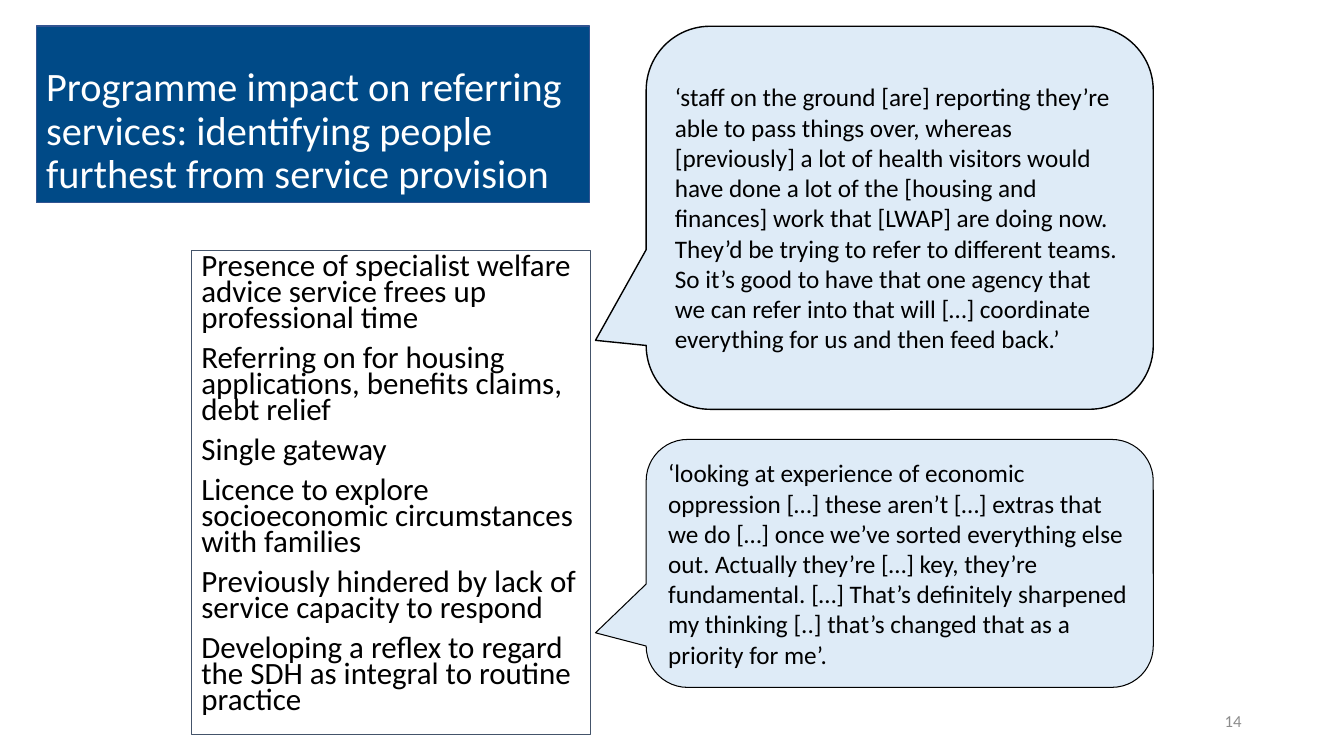
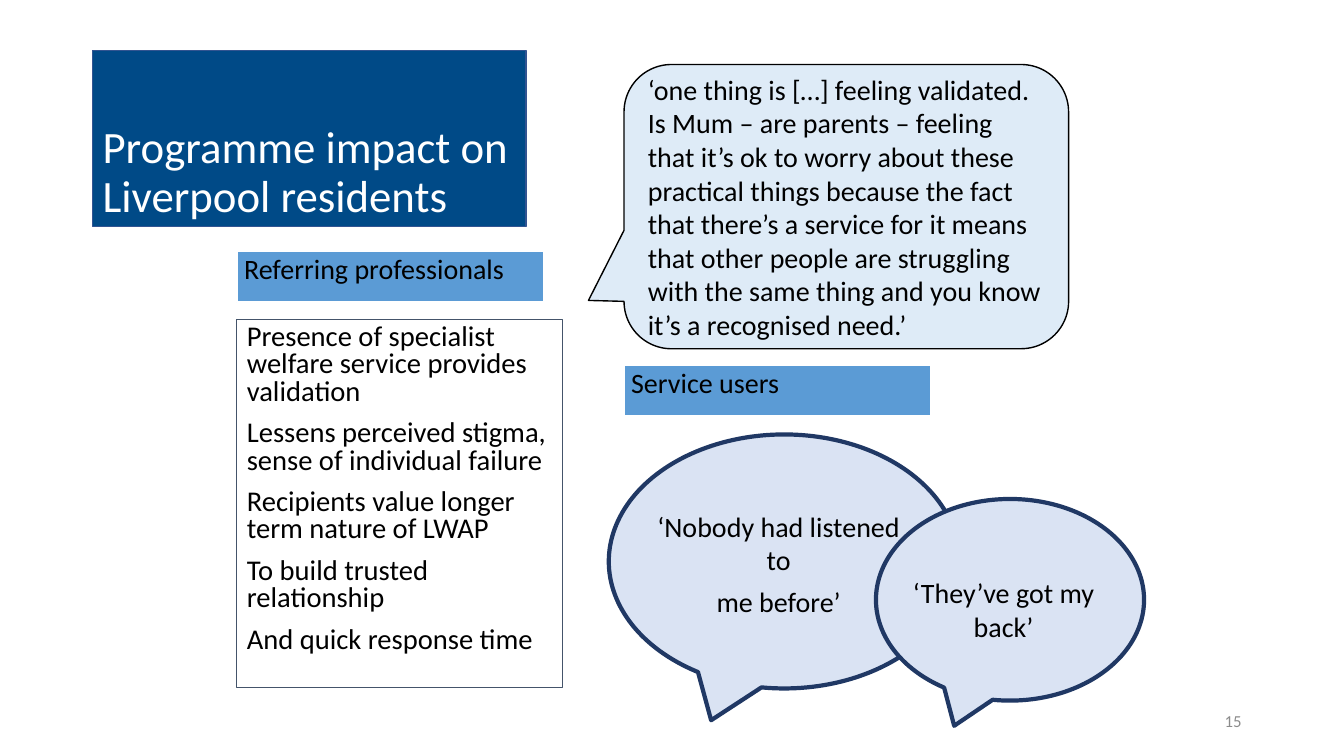
"""Build two slides on programme impact, with key points and quoted speech."""

from dataclasses import dataclass

from pptx import Presentation
from pptx.dml.color import RGBColor
from pptx.enum.shapes import MSO_SHAPE
from pptx.enum.text import MSO_ANCHOR, PP_ALIGN
from pptx.presentation import Presentation as Deck
from pptx.shapes.autoshape import Shape
from pptx.slide import Slide
from pptx.util import Inches, Pt

RECTANGLE = MSO_SHAPE.RECTANGLE
ROUND_CALLOUT = MSO_SHAPE.ROUNDED_RECTANGULAR_CALLOUT
OVAL_CALLOUT = MSO_SHAPE.OVAL_CALLOUT
TOP, MIDDLE, BOTTOM = MSO_ANCHOR.TOP, MSO_ANCHOR.MIDDLE, MSO_ANCHOR.BOTTOM
LEFT, CENTER, RIGHT = PP_ALIGN.LEFT, PP_ALIGN.CENTER, PP_ALIGN.RIGHT

SLIDE_WIDTH = Inches(13.333)
SLIDE_HEIGHT = Inches(7.5)
BLANK_LAYOUT = 6


@dataclass(frozen=True)
class Theme:
    """Colours and type sizes that the slides share."""

    font: str = "Calibri"
    ink: str = "000000"
    paper: str = "FFFFFF"
    navy: str = "004A87"
    navy_edge: str = "325491"
    slate: str = "44546A"
    pale_blue: str = "DEEBF7"
    mid_blue: str = "5B9BD5"
    lilac: str = "DAE3F3"
    deep_blue: str = "203864"
    grey: str = "8C8C8C"
    long_title: float = 28.8
    title: float = 32
    long_points: float = 22.1
    points: float = 20.4
    long_quote: float = 18
    text: float = 20
    number: float = 12


THEME = Theme()


@dataclass(frozen=True)
class Area:
    """A box in percent of the slide's width and height."""

    left: float
    top: float
    width: float
    height: float


@dataclass(frozen=True)
class Style:
    """Outline, fill and paragraph format of one kind of box."""

    fill: str = ""
    line: str = ""
    weight: float = 1
    color: str = THEME.ink
    anchor: MSO_ANCHOR = TOP
    align: PP_ALIGN = LEFT
    spacing: float = 1
    before: float = 0
    after: float = 0
    margins: tuple[float, float] = (0.1, 0.05)


@dataclass(frozen=True)
class Box:
    """One box on a slide, with its style and its text."""

    area: Area
    style: Style
    text: str = ""
    size: float = THEME.text
    kind: MSO_SHAPE = RECTANGLE
    adjustments: tuple[float, ...] = ()


TITLE = Style(THEME.navy, THEME.navy_edge, color=THEME.paper, anchor=BOTTOM, spacing=0.9)
LONG_POINTS = Style(line=THEME.slate, weight=0.75, spacing=0.7, before=10)
POINTS = Style(line=THEME.slate, weight=0.75, spacing=0.8, before=10)
QUOTE = Style(THEME.pale_blue, THEME.ink, anchor=MIDDLE)
THIN_QUOTE = Style(THEME.pale_blue, THEME.ink, 0.75, anchor=MIDDLE)
LABEL = Style(THEME.mid_blue, THEME.paper, 1.5, spacing=0.9, before=7.5, margins=(0.07, 0.04))
BUBBLE = Style(THEME.lilac, THEME.deep_blue, 3)
SPEECH = Style(align=CENTER, after=6)
NUMBER = Style(color=THEME.grey, anchor=MIDDLE, align=RIGHT)

NUMBER_AREA = Area(70.63, 92.67, 22.5, 5.33)
FIRST_NUMBER = 14
CORNER = 0.167

SERVICES = (
    Box(
        Area(2.7, 3.47, 41.18, 23.33), TITLE,
        "Programme impact on referring services: identifying people "
        "furthest from service provision",
        THEME.long_title,
    ),
    Box(
        Area(14.25, 33.2, 29.7, 64), LONG_POINTS,
        "Presence of specialist welfare advice service frees up professional time\n"
        "Referring on for housing applications, benefits claims, debt relief\n"
        "Single gateway\n"
        "Licence to explore socioeconomic circumstances with families\n"
        "Previously hindered by lack of service capacity to respond\n"
        "Developing a reflex to regard the SDH as integral to routine practice",
        THEME.long_points,
    ),
    Box(
        Area(48.08, 3.47, 37.73, 50.67), QUOTE,
        "‘staff on the ground [are] reporting they’re able to pass things over, "
        "whereas [previously] a lot of health visitors would have done a lot of the "
        "[housing and finances] work that [LWAP] are doing now. They’d be trying to "
        "refer to different teams. So it’s good to have that one agency that we can "
        "refer into that will […] coordinate everything for us and then feed back.’",
        THEME.long_quote, ROUND_CALLOUT, (-0.6, 0.32, CORNER),
    ),
    Box(
        Area(48.08, 58.13, 37.73, 32.8), THIN_QUOTE,
        "‘looking at experience of economic oppression […] these aren’t […] extras "
        "that we do […] once we’ve sorted everything else out. Actually they’re […] "
        "key, they’re fundamental. […] That’s definitely sharpened my thinking [..] "
        "that’s changed that as a priority for me’.",
        THEME.long_quote, ROUND_CALLOUT, (-0.6, 0.28, CORNER),
    ),
)

RESIDENTS = (
    Box(
        Area(6.9, 6.67, 32.25, 23.33), TITLE,
        "Programme impact on Liverpool residents", THEME.title,
    ),
    Box(
        Area(17.63, 42.27, 24.23, 48.67), POINTS,
        "Presence of specialist welfare service provides validation\n"
        "Lessens perceived stigma, sense of individual failure\n"
        "Recipients value longer term nature of LWAP\n"
        "To build trusted relationship\n"
        "And quick response time",
        THEME.points,
    ),
    Box(
        Area(46.43, 8.53, 33.08, 37.6), QUOTE,
        "‘one thing is […] feeling validated. Is Mum – are parents – feeling that "
        "it’s ok to worry about these practical things because the fact that there’s "
        "a service for it means that other people are struggling with the same thing "
        "and you know it’s a recognised need.’",
        kind=ROUND_CALLOUT, adjustments=(-0.58, 0.33, CORNER),
    ),
    Box(Area(17.63, 33.2, 22.88, 6.8), LABEL, "Referring professionals"),
    Box(Area(46.43, 48.27, 22.88, 6.8), LABEL, "Service users"),
    Box(Area(45.3, 57.47, 26.1, 33.6), BUBBLE, kind=OVAL_CALLOUT),
    Box(Area(47.85, 66.67, 20.18, 15.87), SPEECH, "‘Nobody had listened to\nme before’"),
    Box(Area(65.18, 66, 19.95, 26.67), BUBBLE, kind=OVAL_CALLOUT),
    Box(Area(66.83, 75.47, 15.68, 10.27), SPEECH, "‘They’ve got my back’"),
)


def place(area: Area) -> tuple[int, int, int, int]:
    """Turn percentages into left, top, width and height."""
    return (
        round(SLIDE_WIDTH * area.left / 100),
        round(SLIDE_HEIGHT * area.top / 100),
        round(SLIDE_WIDTH * area.width / 100),
        round(SLIDE_HEIGHT * area.height / 100),
    )


def paint(shape: Shape, style: Style) -> None:
    """Set the fill and outline of a shape."""
    shape.shadow.inherit = False
    if style.fill:
        shape.fill.solid()
        shape.fill.fore_color.rgb = RGBColor.from_string(style.fill)
    else:
        shape.fill.background()
    shape.line.color.rgb = RGBColor.from_string(style.line)
    shape.line.width = Pt(style.weight)


def write(shape: Shape, box: Box) -> None:
    """Put the text of a box into its shape and format it."""
    style, frame = box.style, shape.text_frame
    frame.text = box.text
    frame.word_wrap = True
    frame.vertical_anchor = style.anchor
    across, down = style.margins
    frame.margin_left = frame.margin_right = Inches(across)
    frame.margin_top = frame.margin_bottom = Inches(down)
    for para in frame.paragraphs:
        para.alignment = style.align
        para.line_spacing = style.spacing
        para.space_before = Pt(style.before)
        para.space_after = Pt(style.after)
        for span in para.runs:
            span.font.name = THEME.font
            span.font.size = Pt(box.size)
            span.font.color.rgb = RGBColor.from_string(style.color)


def draw(page: Slide, box: Box) -> None:
    """Add a box as a shape, or as a text box when it has no outline."""
    if box.style.line:
        shape = page.shapes.add_shape(box.kind, *place(box.area))
        paint(shape, box.style)
        for index, value in enumerate(box.adjustments):
            shape.adjustments[index] = value
    else:
        shape = page.shapes.add_textbox(*place(box.area))
    if box.text:
        write(shape, box)


def add_page(deck: Deck, number: int, boxes: tuple[Box, ...]) -> None:
    """Add a slide with its boxes and its slide number."""
    page = deck.slides.add_slide(deck.slide_layouts[BLANK_LAYOUT])
    for box in boxes:
        draw(page, box)
    draw(page, Box(NUMBER_AREA, NUMBER, str(number), THEME.number))


def main() -> None:
    """Build the deck and save it."""
    deck = Presentation()
    deck.slide_width = SLIDE_WIDTH
    deck.slide_height = SLIDE_HEIGHT
    for number, boxes in enumerate((SERVICES, RESIDENTS), FIRST_NUMBER):
        add_page(deck, number, boxes)
    deck.save("out.pptx")


if __name__ == "__main__":
    main()
